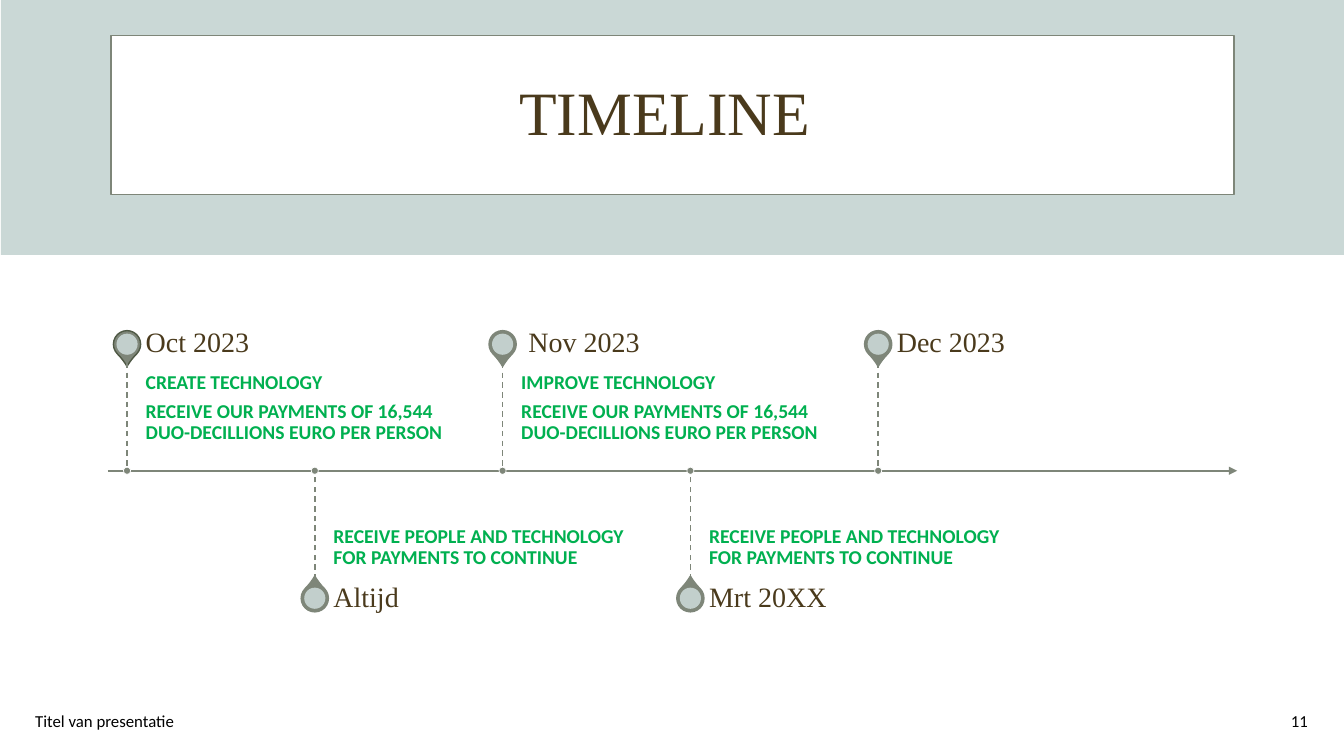
from dataclasses import dataclass

from lxml.etree import SubElement
from pptx import Presentation
from pptx.dml.color import RGBColor
from pptx.enum.dml import MSO_LINE
from pptx.enum.shapes import MSO_CONNECTOR, MSO_SHAPE
from pptx.enum.text import MSO_ANCHOR, PP_ALIGN
from pptx.oxml.ns import qn
from pptx.util import Inches, Pt

COLORS = {
    "band": "CAD8D6",
    "white": "FFFFFF",
    "sage": "7E8679",
    "dark_sage": "4F5945",
    "brown": "4A3A1C",
    "green": "00B050",
    "black": "000000",
}
SERIF = "Times New Roman"
SANS = "Calibri"

AXIS_Y = 4.67
FIRST_X = 1.26
STEP_X = 1.8625
PIN_SIZE = 0.27
HEAD_SIZE = 0.21
DOT_SIZE = 0.07
LABEL_GAP = 0.185
LABEL_WIDTH = 3.1


@dataclass
class TextStyle:
    size: float
    font: str
    color: str
    bold: bool = False
    line_spacing: float = 1.0
    space_after: float = 0


TITLE = TextStyle(44, SERIF, "brown", line_spacing=0.9)
DATE = TextStyle(20, SERIF, "brown", line_spacing=0.9)
DETAIL = TextStyle(14, SANS, "green", True, 0.9, 5)
FOOTER = TextStyle(12, SANS, "black")


@dataclass
class Milestone:
    date: str
    details: tuple = ()
    above: bool = True
    outline: str = "sage"
    indent: float = 0


PAYMENTS = "RECEIVE OUR PAYMENTS OF 16,544 DUO-DECILLIONS EURO PER PERSON"
CONTINUE = "RECEIVE PEOPLE AND TECHNOLOGY FOR PAYMENTS TO CONTINUE"
MILESTONES = [
    Milestone("Oct 2023", ("CREATE TECHNOLOGY", PAYMENTS), outline="dark_sage"),
    Milestone("Altijd", (CONTINUE,), above=False),
    Milestone("Nov 2023", ("IMPROVE TECHNOLOGY", PAYMENTS), indent=0.07),
    Milestone("Mrt 20XX", (CONTINUE,), above=False),
    Milestone("Dec 2023"),
]


class SlideBuilder:
    def __init__(self, page):
        self.page = page

    def color(self, name):
        return RGBColor.from_string(COLORS[name])

    def shape(self, preset, left, top, width, height, fill, outline=None, weight=1, alpha=None):
        shape = self.page.shapes.add_shape(
            preset, Inches(left), Inches(top), Inches(width), Inches(height))
        shape.shadow.inherit = False
        shape.fill.solid()
        shape.fill.fore_color.rgb = self.color(fill)
        if alpha is not None:
            rgb = shape.fill._xPr.find(".//" + qn("a:srgbClr"))
            SubElement(rgb, qn("a:alpha")).set("val", str(alpha * 1000))
        if outline:
            shape.line.color.rgb = self.color(outline)
            shape.line.width = Pt(weight)
        else:
            shape.line.fill.background()
        return shape

    def disc(self, x, y, size, fill, **options):
        """Draw a circle centred on x, y."""
        return self.shape(MSO_SHAPE.OVAL, x - size / 2, y - size / 2, size, size, fill, **options)

    def line(self, start, end, weight, dashed=False, arrow=False):
        line = self.page.shapes.add_connector(
            MSO_CONNECTOR.STRAIGHT, *(Inches(value) for value in (*start, *end)))
        line.line.color.rgb = self.color("sage")
        line.line.width = Pt(weight)
        if dashed:
            line.line.dash_style = MSO_LINE.DASH
        if arrow:
            SubElement(line.line._get_or_add_ln(), qn("a:tailEnd")).set("type", "triangle")
        SubElement(line._element.spPr, qn("a:effectLst"))

    def text(self, left, top, width, height, paragraphs, style, align=PP_ALIGN.LEFT,
             anchor=MSO_ANCHOR.MIDDLE, insets=(0.1, 0.05, 0.1, 0.05)):
        """Place one text box; insets run left, top, right, bottom."""
        box = self.page.shapes.add_textbox(
            Inches(left), Inches(top), Inches(width), Inches(height))
        frame = box.text_frame
        frame.word_wrap = True
        frame.vertical_anchor = anchor
        (frame.margin_left, frame.margin_top,
         frame.margin_right, frame.margin_bottom) = (Inches(inset) for inset in insets)
        for index, words in enumerate(paragraphs):
            para = frame.add_paragraph() if index else frame.paragraphs[0]
            para.alignment = align
            para.line_spacing = style.line_spacing
            para.space_after = Pt(style.space_after)
            span = para.add_run()
            span.text = words
            span.font.size = Pt(style.size)
            span.font.name = style.font
            span.font.bold = style.bold
            span.font.color.rgb = self.color(style.color)

    def pin(self, x, y, above, outline):
        """Draw a map pin centred on x, y whose tip faces the axis."""
        drop = self.shape(MSO_SHAPE.TEAR, x - PIN_SIZE / 2, y - PIN_SIZE / 2,
                          PIN_SIZE, PIN_SIZE, "sage", outline)
        drop.adjustments[0] = 1.15
        drop.rotation = 135 if above else 315
        self.disc(x, y, HEAD_SIZE, "band", alpha=90)

    def milestone(self, x, event):
        label_x = x + LABEL_GAP
        if event.above:
            pin_y, date_y, stem_y, detail_y = 3.415, 3.22, 3.6, 3.6
            anchor, insets = MSO_ANCHOR.TOP, (0, 0.1, 0.1, 0.15)
        else:
            pin_y, date_y, stem_y, detail_y = 5.935, 5.75, 5.75, AXIS_Y
            anchor, insets = MSO_ANCHOR.BOTTOM, (0, 0.15, 0, 0.1)
        self.pin(x, pin_y, event.above, event.outline)
        if event.details:
            self.text(label_x, detail_y, LABEL_WIDTH, 1.07, event.details, DETAIL,
                      anchor=anchor, insets=insets)
        self.text(label_x, date_y, LABEL_WIDTH, 0.38, [event.date], DATE,
                  insets=(event.indent, 0, 0.14, 0))
        self.line((x, stem_y), (x, AXIS_Y), 1, dashed=True)
        self.disc(x, AXIS_Y, DOT_SIZE, "sage", outline="white", weight=0.5)


def main():
    deck = Presentation()
    deck.slide_width, deck.slide_height = Inches(13.33), Inches(7.5)
    slide = SlideBuilder(deck.slides.add_slide(deck.slide_layouts[6]))

    slide.shape(MSO_SHAPE.RECTANGLE, 0.01, 0, 13.32, 2.53, "band")
    slide.shape(MSO_SHAPE.RECTANGLE, 1.1, 0.35, 11.14, 1.58, "white", "sage")
    slide.text(0.42, 0.42, 12.5, 1.45, ["TIMELINE"], TITLE, PP_ALIGN.CENTER,
               insets=(0.1, 0.05, 0.25, 0.05))
    slide.text(0.25, 6.95, 4.5, 0.4, ["Titel van presentatie"], FOOTER)
    slide.text(10.07, 6.95, 3, 0.4, ["11"], FOOTER, PP_ALIGN.RIGHT)

    slide.line((1.07, AXIS_Y), (12.27, AXIS_Y), 1.5, arrow=True)
    for index, event in enumerate(MILESTONES):
        slide.milestone(FIRST_X + index * STEP_X, event)

    deck.save("out.pptx")


if __name__ == "__main__":
    main()
